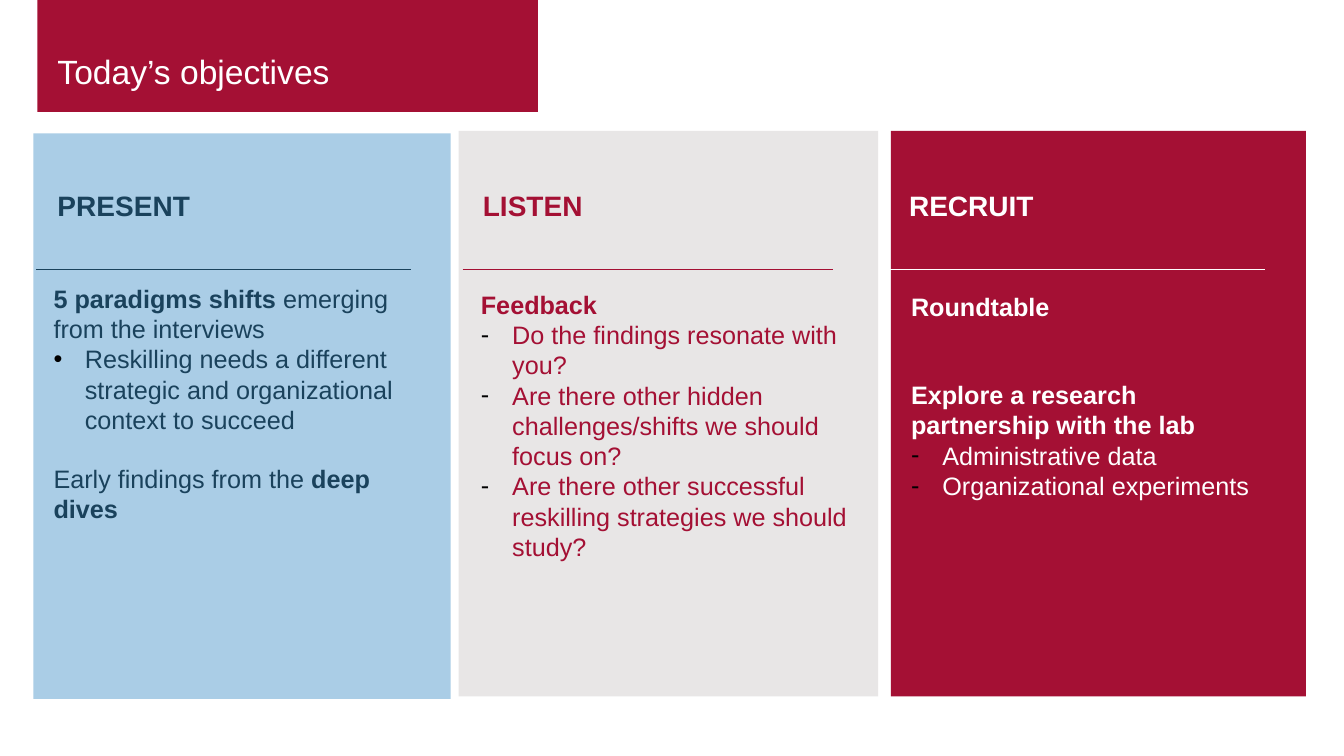
"""Builds the slide of today's objectives in three coloured columns."""
from lxml.etree import SubElement
from pptx import Presentation
from pptx.dml.color import RGBColor
from pptx.enum.shapes import MSO_CONNECTOR, MSO_SHAPE
from pptx.enum.text import MSO_ANCHOR, PP_ALIGN
from pptx.oxml.ns import qn
from pptx.util import Cm, Pt

COLORS = {"crimson": "A41034", "gray": "E8E6E6", "sky": "AACDE6",
          "navy": "1A425C", "white": "FFFFFF", "black": "000000"}
LINE_GAP = 20.7


def text_item(*spans, bullet=None, gap=0):
    return {"spans": spans, "bullet": bullet, "gap": gap}


def bold(text):
    return text, True


def plain(text):
    return text, False


class ObjectivesSlide:
    font = "Arial"
    insets = (0.51, 0.13, 0.25, 0.13)

    def __init__(self, page):
        self.page = page

    def color(self, name):
        return RGBColor.from_string(COLORS[name])

    def panel(self, left, top, width, height, fill):
        box = self.page.shapes.add_shape(
            MSO_SHAPE.RECTANGLE, Cm(left), Cm(top), Cm(width), Cm(height))
        box.shadow.inherit = False
        box.fill.solid()
        box.fill.fore_color.rgb = self.color(fill)
        box.line.fill.background()
        return box

    def rule(self, left, right, top, color):
        line = self.page.shapes.add_connector(
            MSO_CONNECTOR.STRAIGHT, Cm(left), Cm(top), Cm(right), Cm(top))
        line.line.color.rgb = self.color(color)
        line.line.width = Pt(0.75)
        SubElement(line._element.spPr, qn("a:effectLst"))

    def bullet(self, para, mark):
        properties = para._p.get_or_add_pPr()
        properties.set("marL", str(Cm(0.79)))
        properties.set("indent", str(-Cm(0.79)))
        bullet_color = SubElement(properties, qn("a:buClr"))
        SubElement(bullet_color, qn("a:srgbClr"), val=COLORS["black"])
        SubElement(properties, qn("a:buFont"), typeface=self.font)
        SubElement(properties, qn("a:buChar"), char=mark)

    def fill_text(self, box, items, size, color, insets=None, anchor=MSO_ANCHOR.TOP, spacing=1.0):
        frame = box.text_frame
        frame.word_wrap = True
        frame.vertical_anchor = anchor
        (frame.margin_left, frame.margin_top, frame.margin_right,
         frame.margin_bottom) = map(Cm, insets or self.insets)
        for index, item in enumerate(items):
            para = frame.add_paragraph() if index else frame.paragraphs[0]
            if item["bullet"]:
                self.bullet(para, item["bullet"])
            para.alignment = PP_ALIGN.LEFT
            para.line_spacing = spacing
            para.space_before = Pt(item["gap"])
            for text, is_bold in item["spans"]:
                span = para.add_run()
                span.text = text
                span.font.name = self.font
                span.font.size = Pt(size)
                span.font.bold = is_bold
                span.font.color.rgb = self.color(color)

    def text(self, left, top, width, height, items, size, color):
        box = self.page.shapes.add_textbox(Cm(left), Cm(top), Cm(width), Cm(height))
        self.fill_text(box, items, size, color)

    def title(self, text):
        box = self.panel(0.94, 0, 12.62, 2.82, "crimson")
        self.fill_text(box, [text_item(plain(text))], 24, "white",
                       insets=(0.51, 1.5, 0.2, 0.51), anchor=MSO_ANCHOR.BOTTOM, spacing=0.9)

    def column(self, heading, fill, ink, panel, rule, heading_left, body, items):
        left, top, width = panel
        self.panel(left, top, width, 14.25, fill)
        self.rule(*rule, 6.8, ink)
        self.text(heading_left, 4.62, 9.42, 1.19, [text_item(bold(heading))], 20, ink)
        body_left, body_top, body_height = body
        self.text(body_left, body_top, 10.01, body_height, items, 18, ink)


COLUMNS = [
    dict(heading="PRESENT", fill="sky", ink="navy", panel=(0.84, 3.36, 10.52),
         rule=(0.91, 10.36), heading_left=0.94, body=(0.84, 7.01, 10.49), items=[
             text_item(bold("5 paradigms shifts"), plain(" emerging from the interviews")),
             text_item(plain("Reskilling needs a different strategic and "
                             "organizational context to succeed"), bullet="•"),
             text_item(plain("Early findings from the "), bold("deep dives"), gap=LINE_GAP)]),
    dict(heading="LISTEN", fill="gray", ink="crimson", panel=(11.56, 3.3, 10.57),
         rule=(11.66, 20.98), heading_left=11.66, body=(11.61, 7.16, 10.59), items=[
             text_item(bold("Feedback")),
             text_item(plain("Do the findings resonate with you?"), bullet="-"),
             text_item(plain("Are there other hidden challenges/shifts "
                             "we should focus on?"), bullet="-"),
             text_item(plain("Are there other successful reskilling strategies "
                             "we should study?"), bullet="-")]),
    dict(heading="RECRUIT", fill="crimson", ink="white", panel=(22.45, 3.3, 10.46),
         rule=(22.43, 31.88), heading_left=22.4, body=(22.45, 7.21, 8.64), items=[
             text_item(bold("Roundtable")),
             text_item(bold("Explore a research partnership with the lab"), gap=2 * LINE_GAP),
             text_item(plain("Administrative data"), bullet="-"),
             text_item(plain("Organizational experiments"), bullet="-")]),
]


def main():
    deck = Presentation()
    deck.slide_width, deck.slide_height = Cm(33.87), Cm(19.05)
    slide = ObjectivesSlide(deck.slides.add_slide(deck.slide_layouts[6]))
    slide.title("Today’s objectives")
    for column in COLUMNS:
        slide.column(**column)
    deck.save("out.pptx")


if __name__ == "__main__":
    main()
